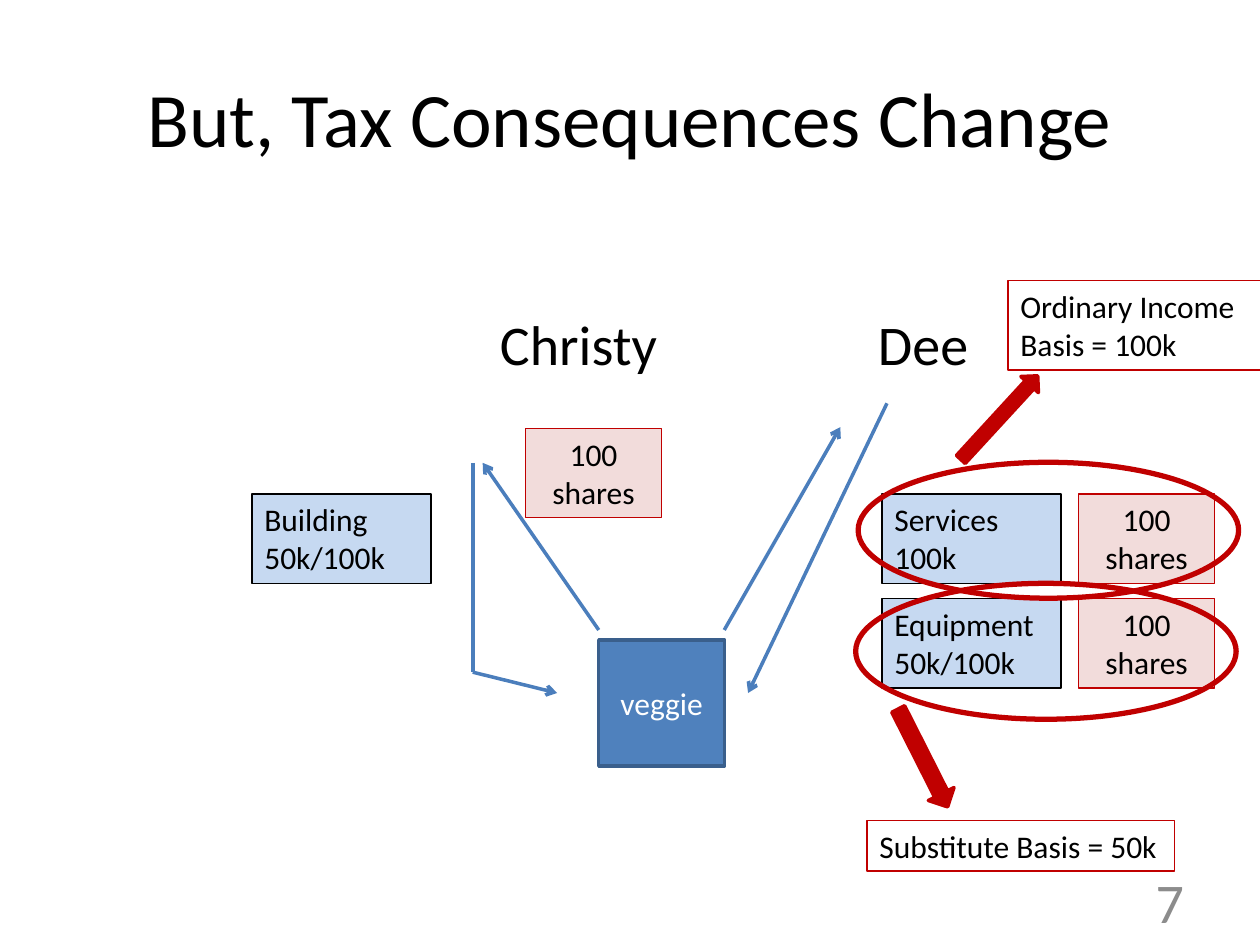
import collections

import lxml.etree
import pptx
import pptx.dml.color
import pptx.enum.shapes
import pptx.enum.text
import pptx.oxml.ns
import pptx.util

Cm, Pt = pptx.util.Cm, pptx.util.Pt
RGB = pptx.dml.color.RGBColor
SHAPE = pptx.enum.shapes.MSO_SHAPE
ALIGN = pptx.enum.text.PP_ALIGN
ANCHOR = pptx.enum.text.MSO_ANCHOR
qn = pptx.oxml.ns.qn

BLACK = RGB(0x00, 0x00, 0x00)
WHITE = RGB(0xFF, 0xFF, 0xFF)
GREY = RGB(0x8C, 0x8C, 0x8C)
BLUE = RGB(0x4F, 0x81, 0xBD)
DARK_BLUE = RGB(0x3A, 0x5F, 0x8C)
LINE_BLUE = RGB(0x4B, 0x7E, 0xBC)
PALE_BLUE = RGB(0xC6, 0xD9, 0xF1)
PINK = RGB(0xF2, 0xDC, 0xDB)
RED = RGB(0xC0, 0x00, 0x00)

# All boxes are in centimetres
Box = collections.namedtuple("Box", "x y w h")
ASSET_W, SHARES_W, BOX_H = 3.61, 2.75, 1.8


def write(sp, lines, size=18, color=BLACK, align=ALIGN.LEFT, anchor=ANCHOR.TOP):
    tf = sp.text_frame
    tf.word_wrap = True
    tf.vertical_anchor = anchor
    for i, line in enumerate(lines):
        p = tf.add_paragraph() if i else tf.paragraphs[0]
        p.alignment = align
        r = p.add_run()
        r.text = line
        r.font.name = "Calibri"
        r.font.size = Pt(size)
        r.font.color.rgb = color


def add_label(s, box, text, size, **style):
    sp = s.shapes.add_textbox(*map(Cm, box))
    write(sp, [text], size, **style)
    return sp


def add_shape(s, kind, box, fill, line, width):
    sp = s.shapes.add_shape(kind, *map(Cm, box))
    sp.shadow.inherit = False
    if fill is None:
        sp.fill.background()
    else:
        sp.fill.solid()
        sp.fill.fore_color.rgb = fill
    sp.line.color.rgb = line
    sp.line.width = Pt(width)
    return sp


def add_line(s, box, start, end, arrow=True):
    ends = [Cm(v) for x, y in (start, end) for v in (box.x + x, box.y + y)]
    line = s.shapes.add_connector(pptx.enum.shapes.MSO_CONNECTOR.STRAIGHT, *ends)
    line.line.color.rgb = LINE_BLUE
    line.line.width = Pt(2)
    if arrow:
        ln = line.line._get_or_add_ln()
        lxml.etree.SubElement(ln, qn("a:tailEnd"), type="arrow")
    lxml.etree.SubElement(line._element.spPr, qn("a:effectLst"))


def add_asset(s, x, y, text):
    sp = add_shape(s, SHAPE.RECTANGLE, Box(x, y, ASSET_W, BOX_H), PALE_BLUE, BLACK, 0.75)
    write(sp, [text])


def add_shares(s, x, y):
    sp = add_shape(s, SHAPE.RECTANGLE, Box(x, y, SHARES_W, BOX_H), PINK, RED, 0.75)
    write(sp, ["100 shares"], align=ALIGN.CENTER)


def add_owner(s, box, name):
    sp = add_label(s, box, name, 32)
    tf = sp.text_frame
    tf.margin_left = tf.margin_right = tf.margin_top = tf.margin_bottom = 0


def add_company(s, box):
    sp = add_shape(s, SHAPE.RECTANGLE, box, BLUE, DARK_BLUE, 2)
    write(sp, ["veggie"], color=WHITE, align=ALIGN.CENTER, anchor=ANCHOR.MIDDLE)


def add_christy_exchange(s, box):
    # Building goes to the company, shares come back
    corner = (4.45, 4.91)
    add_line(s, box, (4.45, 0.69), corner, arrow=False)
    add_line(s, box, corner, (6.15, 5.33))
    add_line(s, box, (6.99, 4.06), (4.65, 0.69))
    add_asset(s, box.x, box.y + 1.32, "Building 50k/100k")
    add_shares(s, box.x + box.w - SHARES_W, box.y)


def add_dee_exchange(s, box):
    # Services and equipment go to the company, shares come back
    add_line(s, box, (3.28, 0), (0.48, 5.84))
    add_line(s, box, (0, 4.57), (2.34, 0.48))
    for top, asset in ((1.83, "Services 100k"), (3.94, "Equipment 50k/100k")):
        add_asset(s, box.x + 3.18, box.y + top, asset)
        add_shares(s, box.x + box.w - SHARES_W, box.y + top)


def add_tax_result(s, ring, arrow, angle, note, lines):
    # Ring around a trade, with a block arrow to its tax result
    add_shape(s, SHAPE.OVAL, ring, None, RED, 3)
    sp = add_shape(s, SHAPE.RIGHT_ARROW, arrow, RED, RED, 2)
    sp.rotation = angle
    write(add_shape(s, SHAPE.RECTANGLE, note, None, RED, 0.75), lines)


def main():
    prs = pptx.Presentation()
    prs.slide_width, prs.slide_height = Cm(25.4), Cm(19.05)
    s = prs.slides.add_slide(prs.slide_layouts[6])

    # Title and slide number
    add_label(s, Box(1.27, 0.76, 22.86, 3.18), "But, Tax Consequences Change", 44,
              align=ALIGN.CENTER, anchor=ANCHOR.MIDDLE)
    add_label(s, Box(18.2, 17.65, 5.92, 1.02), "7", 32, color=GREY,
              align=ALIGN.RIGHT, anchor=ANCHOR.MIDDLE)

    # Owners and company
    add_owner(s, Box(10.08, 6.24, 4, 1.38), "Christy")
    add_owner(s, Box(17.7, 6.24, 2.5, 1.38), "Dee")
    add_company(s, Box(12.07, 12.9, 2.54, 2.54))

    # Exchanges
    add_christy_exchange(s, Box(5.08, 8.64, 8.26, 5.33))
    add_dee_exchange(s, Box(14.6, 8.13, 9.89, 5.84))

    # Tax results
    add_tax_result(s, Box(17.3, 9.32, 7.67, 2.74), Box(19, 8.18, 2.29, 0.48), 312.6,
                   Box(20.32, 5.66, 5.36, BOX_H), ["Ordinary Income", "Basis = 100k"])
    add_tax_result(s, Box(17.25, 11.76, 7.67, 2.74), Box(17.5, 14.99, 2.21, 0.58), 63.2,
                   Box(17.48, 16.54, 6.2, 1.02), ["Substitute Basis = 50k"])

    prs.save("out.pptx")


if __name__ == "__main__":
    main()
